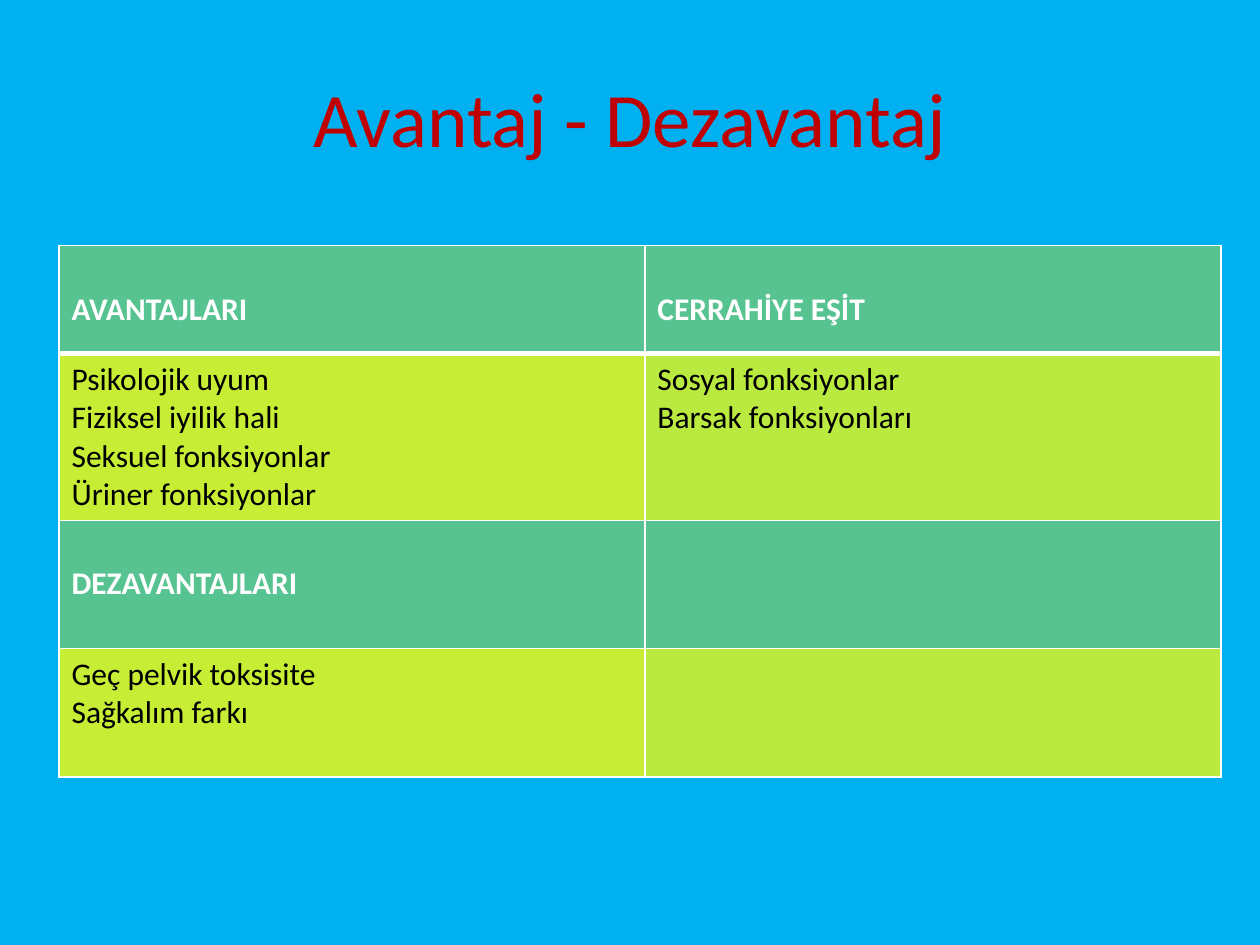
from dataclasses import dataclass

import lxml.etree
import pptx
import pptx.dml.color
import pptx.enum.text
import pptx.oxml.ns
import pptx.util

Cm = pptx.util.Cm
Pt = pptx.util.Pt
qn = pptx.oxml.ns.qn
RGB = pptx.dml.color.RGBColor.from_string


@dataclass(frozen=True)
class Theme:
    font: str = "Calibri"
    background: str = "00B0F0"
    title: str = "C00000"
    heading: str = "FFFFFF"
    body: str = "000000"
    border: str = "FFFFFF"
    heading_fill: str = "92D050"
    body_fill: str = "FFFF00"
    heading_opacity: tuple = (60, 60)
    body_opacity: tuple = (78, 73)
    title_size: int = 44
    text_size: int = 18
    thin: int = 1
    thick: int = 3


THEME = Theme()
COLUMN_WIDTHS = (11.81, 11.61)
ROWS = (
    (True, 2.18, (["AVANTAJLARI"], ["CERRAHİYE EŞİT"])),
    (False, 2.59, (
        ["Psikolojik uyum", "Fiziksel iyilik hali", "Seksuel fonksiyonlar", "Üriner fonksiyonlar"],
        ["Sosyal fonksiyonlar", "Barsak fonksiyonları"],
    )),
    (True, 2.59, (["DEZAVANTAJLARI"], [])),
    (False, 2.59, (["Geç pelvik toksisite", "Sağkalım farkı"], [])),
)


def apply_format(target, values):
    for name, value in values.items():
        setattr(target, name, value)


def format_font(font, color, size, bold=False):
    apply_format(font, {"name": THEME.font, "size": Pt(size), "bold": bold})
    font.color.rgb = RGB(color)


def add_borders(cell, widths):
    properties = cell._tc.get_or_add_tcPr()
    for side in ("L", "R", "T", "B"):
        width = Pt(widths.get(side, THEME.thin))
        line = lxml.etree.SubElement(properties, qn(f"a:ln{side}"), w=str(width))
        fill = lxml.etree.SubElement(line, qn("a:solidFill"))
        lxml.etree.SubElement(fill, qn("a:srgbClr"), val=THEME.border)


def fill_cell(cell, color, opacity):
    cell.fill.solid()
    cell.fill.fore_color.rgb = RGB(color)
    color_element = cell._tc.tcPr.find(f"{qn('a:solidFill')}/{qn('a:srgbClr')}")
    lxml.etree.SubElement(color_element, qn("a:alpha"), val=str(opacity * 1000))


def write_cell(cell, lines, is_heading):
    cell.margin_top = Cm(0.9 if is_heading else 0.13)
    color = THEME.heading if is_heading else THEME.body
    for index, line in enumerate(lines):
        frame = cell.text_frame
        paragraph = frame.add_paragraph() if index else frame.paragraphs[0]
        run = paragraph.add_run()
        run.text = line
        format_font(run.font, color, THEME.text_size, is_heading)


def add_title(slide, text, left, top, width, height):
    shape = slide.shapes.title
    apply_format(shape, {"left": Cm(left), "top": Cm(top), "width": Cm(width), "height": Cm(height)})
    shape.text_frame.text = text
    shape.text_frame.vertical_anchor = pptx.enum.text.MSO_ANCHOR.MIDDLE
    paragraph = shape.text_frame.paragraphs[0]
    paragraph.alignment = pptx.enum.text.PP_ALIGN.CENTER
    format_font(paragraph.runs[0].font, THEME.title, THEME.title_size)


def add_comparison_table(slide, left, top):
    height = sum(row_height for _, row_height, _ in ROWS)
    table = slide.shapes.add_table(
        len(ROWS), len(COLUMN_WIDTHS), Cm(left), Cm(top), Cm(sum(COLUMN_WIDTHS)), Cm(height)
    ).table
    table.horz_banding = False
    for column, width in zip(table.columns, COLUMN_WIDTHS):
        column.width = Cm(width)
    for row_index, (is_heading, row_height, texts) in enumerate(ROWS):
        table.rows[row_index].height = Cm(row_height)
        color = THEME.heading_fill if is_heading else THEME.body_fill
        opacities = THEME.heading_opacity if is_heading else THEME.body_opacity
        widths = {0: {"B": THEME.thick}, 1: {"T": THEME.thick}}.get(row_index, {})
        for column_index, lines in enumerate(texts):
            cell = table.cell(row_index, column_index)
            add_borders(cell, widths)
            fill_cell(cell, color, opacities[column_index])
            write_cell(cell, lines, is_heading)


def main():
    presentation = pptx.Presentation()
    apply_format(presentation, {"slide_width": Cm(25.4), "slide_height": Cm(19.05)})
    slide = presentation.slides.add_slide(presentation.slide_layouts[5])
    slide.background.fill.solid()
    slide.background.fill.fore_color.rgb = RGB(THEME.background)
    add_title(slide, "Avantaj - Dezavantaj", 1.27, 0.76, 22.86, 3.18)
    add_comparison_table(slide, 1.19, 4.95)
    presentation.save("out.pptx")


if __name__ == "__main__":
    main()
